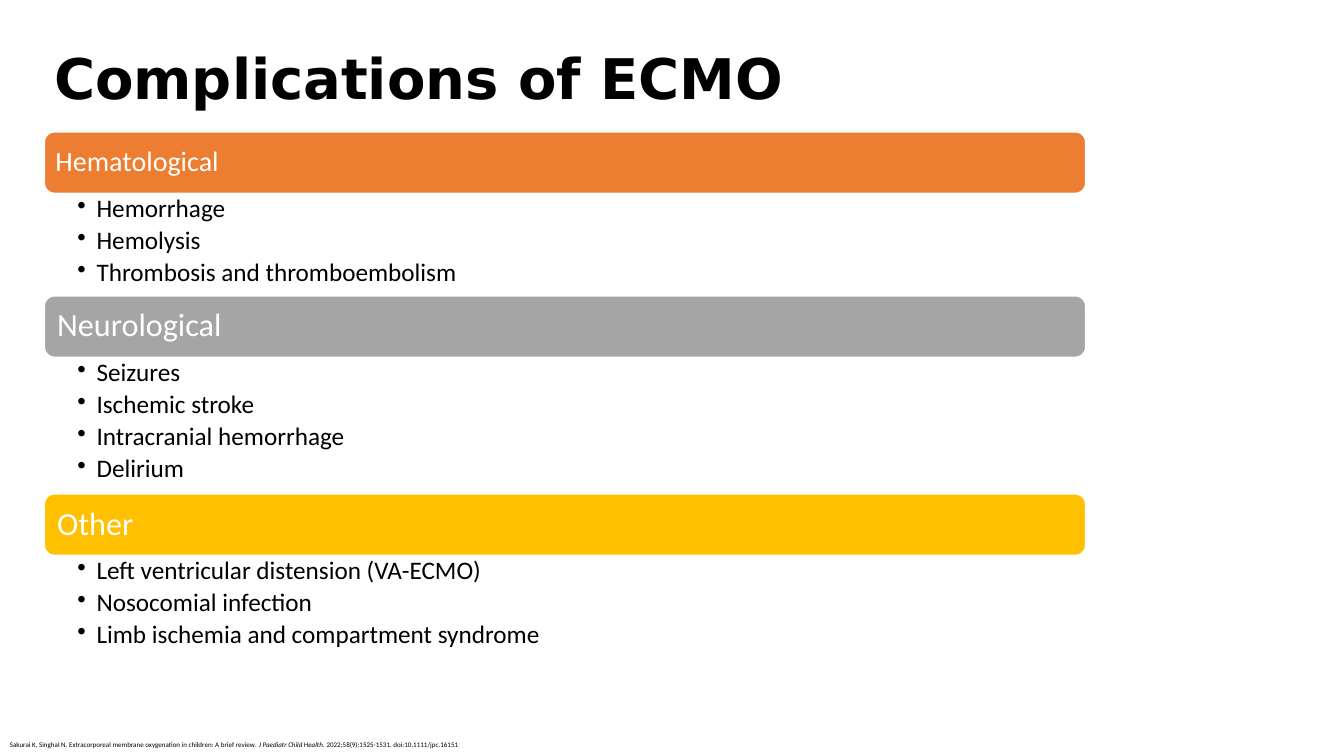
"""Build the slide on complications of ECMO, grouped under three coloured headings."""
from lxml.etree import SubElement
from pptx import Presentation
from pptx.dml.color import RGBColor
from pptx.enum.shapes import MSO_SHAPE as Shape
from pptx.enum.text import MSO_ANCHOR as Anchor, PP_ALIGN as Align
from pptx.oxml.ns import qn
from pptx.util import Pt

BLACK = RGBColor(0x00, 0x00, 0x00)
WHITE = RGBColor(0xFF, 0xFF, 0xFF)
ORANGE = RGBColor(0xED, 0x7D, 0x31)
GRAY = RGBColor(0xA5, 0xA5, 0xA5)
GOLD = RGBColor(0xFF, 0xC0, 0x00)

LEFT, WIDTH = 31.7, 743.8
FIRST_TOP, HEADING_HEIGHT, BULLET_HEIGHT = 94.2, 43.9, 24.4
BULLET_INDENT = 13.7

GROUPS = [
    ("Hematological", ORANGE, 20, 5.8,
     ["Hemorrhage", "Hemolysis", "Thrombosis and thromboembolism"]),
    ("Neurological", GRAY, 23, 7,
     ["Seizures", "Ischemic stroke", "Intracranial hemorrhage", "Delirium"]),
    ("Other", GOLD, 23, 7,
     ["Left ventricular distension (VA-ECMO)", "Nosocomial infection",
      "Limb ischemia and compartment syndrome"]),
]
CITATION = [
    ("Sakurai K, Singhal N. Extracorporeal membrane oxygenation in children: "
     "A brief review. ", False),
    ("J Paediatr Child Health", True),
    (". 2022;58(9):1525-1531. doi:10.1111/jpc.16151", False),
]


def set_frame(frame, anchor, left, top, right, bottom):
    settings = {
        "word_wrap": True, "vertical_anchor": anchor,
        "margin_left": Pt(left), "margin_top": Pt(top),
        "margin_right": Pt(right), "margin_bottom": Pt(bottom),
    }
    for name, value in settings.items():
        setattr(frame, name, value)


def add_words(paragraph, words, size, color, **extra):
    run = paragraph.add_run()
    run.text = words
    run.font.color.rgb = color
    settings = {"name": "Calibri", "size": Pt(size), **extra}
    for name, value in settings.items():
        setattr(run.font, name, value)


prs = Presentation()
prs.slide_width, prs.slide_height = Pt(960), Pt(540)
slide = prs.slides.add_slide(prs.slide_layouts[6])

title = slide.shapes.add_textbox(Pt(LEFT), Pt(7.9), Pt(731.5), Pt(100)).text_frame
set_frame(title, Anchor.MIDDLE, 7.2, 3.6, 7.2, 3.6)
title.paragraphs[0].line_spacing = 0.9
add_words(title.paragraphs[0], "Complications of ECMO", 40, BLACK,
          name="DejaVu Sans", bold=True)

top = FIRST_TOP
for category, color, size, inset, complications in GROUPS:
    heading = slide.shapes.add_shape(
        Shape.ROUNDED_RECTANGLE, Pt(LEFT), Pt(top), Pt(WIDTH), Pt(HEADING_HEIGHT))
    heading.shadow.inherit = False
    heading.fill.solid()
    heading.fill.fore_color.rgb = color
    heading.line.color.rgb = WHITE
    heading.line.width = Pt(1)
    set_frame(heading.text_frame, Anchor.MIDDLE, inset, inset, inset, inset)
    label = heading.text_frame.paragraphs[0]
    label.alignment = Align.LEFT
    label.line_spacing = 0.9
    add_words(label, category, size, WHITE)
    top += HEADING_HEIGHT

    list_height = BULLET_HEIGHT * len(complications)
    details = slide.shapes.add_textbox(
        Pt(LEFT), Pt(top), Pt(WIDTH), Pt(list_height)).text_frame
    set_frame(details, Anchor.TOP, 23.6, 2, 13, 2)
    for index, complication in enumerate(complications):
        item = details.add_paragraph() if index else details.paragraphs[0]
        item.line_spacing = 0.9
        item.space_after = Pt(3.4)
        properties = item._p.get_or_add_pPr()
        properties.set("marL", str(Pt(BULLET_INDENT)))
        properties.set("indent", str(-Pt(BULLET_INDENT)))
        SubElement(properties, qn("a:buChar"), char="•")
        add_words(item, complication, 18, BLACK)
    top += list_height

reference = slide.shapes.add_textbox(Pt(0), Pt(525.6), Pt(708.5), Pt(13.4)).text_frame
set_frame(reference, Anchor.TOP, 7.2, 3.6, 7.2, 3.6)
for words, italic in CITATION:
    add_words(reference.paragraphs[0], words, 5, BLACK, italic=italic)

prs.save("out.pptx")
